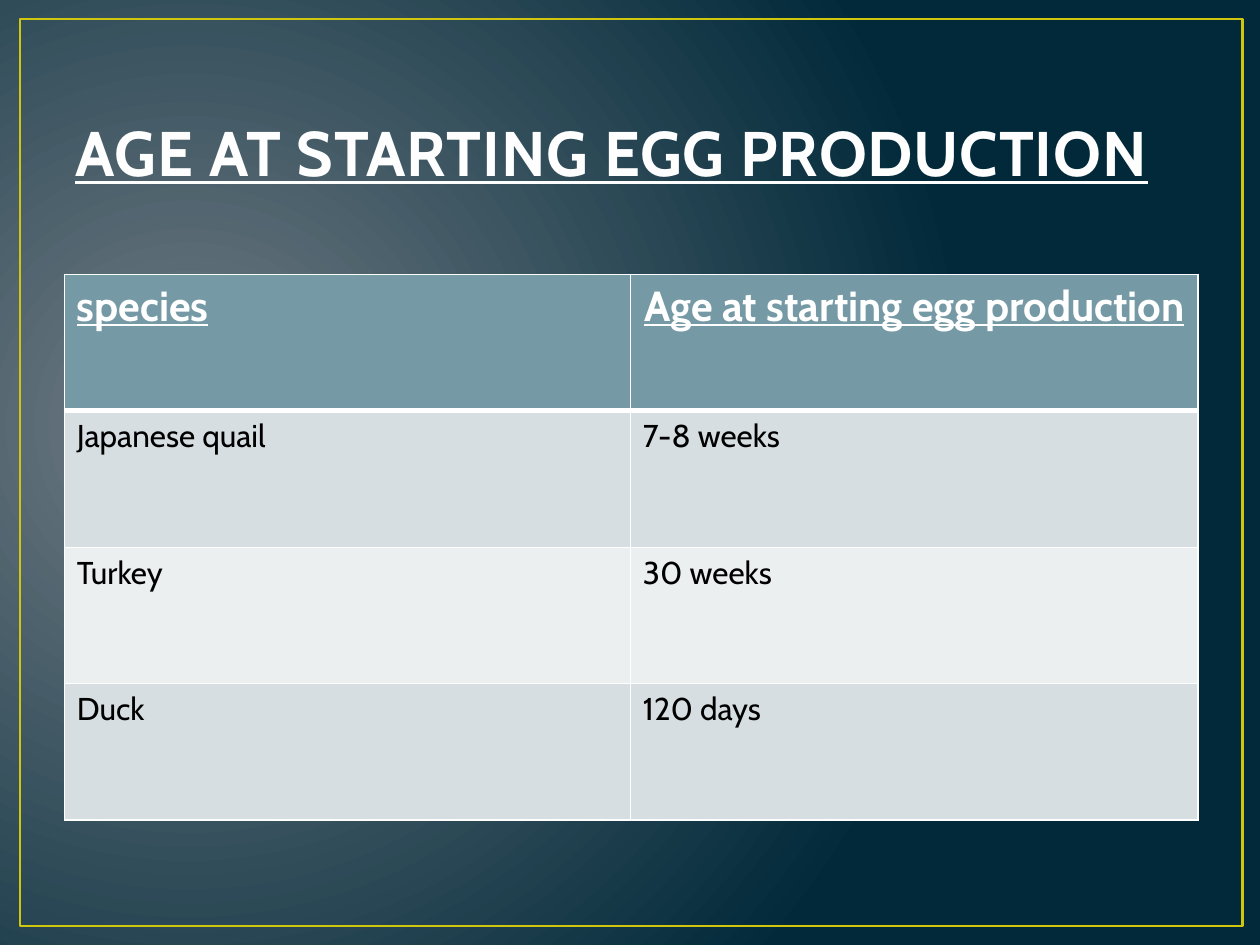
from dataclasses import dataclass

from lxml import etree
from pptx import Presentation
from pptx.dml.color import RGBColor
from pptx.enum import shapes, text
from pptx.oxml import ns
from pptx.util import Pt


@dataclass(frozen=True)
class Theme:
    font: str = "Cabin"
    glow: str = "717C84"
    night: str = "01293A"
    frame: str = "CFC60D"
    title: str = "FEFEFE"
    title_edge: str = "384F55"
    header: str = "759AA5"
    bands: tuple = ("D6DEE1", "ECEFF0")
    white: str = "FFFFFF"
    body: str = "000000"
    title_size: int = 36
    header_size: int = 24
    body_size: int = 18


THEME = Theme()
ROWS = [
    ("species", "Age at starting egg production"),
    ("Japanese quail", "7-8 weeks"),
    ("Turkey", "30 weeks"),
    ("Duck", "120 days"),
]


def rgb(value):
    return RGBColor.from_string(value)


def line_xml(tag, color, width):
    ln = etree.Element(ns.qn(tag), w=str(Pt(width)))
    fill = etree.SubElement(ln, ns.qn("a:solidFill"))
    etree.SubElement(fill, ns.qn("a:srgbClr"), val=color)
    return ln


def style(p, size, color, heading=False):
    f = p.font
    f.name, f.size = THEME.font, Pt(size)
    f.bold = f.underline = heading
    f.color.rgb = rgb(color)


def add_background(s):
    """Fill the slide with a glow that spreads from its left side."""
    fill = s.background.fill
    fill.gradient()
    for stop, color in zip(fill.gradient_stops, (THEME.glow, THEME.night)):
        stop.color.rgb = rgb(color)
    grad = s.background._cSld.find(".//" + ns.qn("a:gradFill"))
    grad.remove(grad.find(ns.qn("a:lin")))
    circle = etree.Element(ns.qn("a:path"), path="circle")
    etree.SubElement(circle, ns.qn("a:fillToRect"),
                     l="15000", t="50000", r="85000", b="60000")
    grad.find(ns.qn("a:gsLst")).addnext(circle)


def add_frame(s, x, y, w, h):
    sp = s.shapes.add_shape(shapes.MSO_SHAPE.RECTANGLE,
                            Pt(x), Pt(y), Pt(w), Pt(h))
    sp.shadow.inherit = False
    sp.fill.background()
    sp.line.color.rgb = rgb(THEME.frame)
    sp.line.width = Pt(1.5)


def add_title(s, x, y, w, h, words):
    tf = s.shapes.add_textbox(Pt(x), Pt(y), Pt(w), Pt(h)).text_frame
    tf.word_wrap = True
    tf.vertical_anchor = text.MSO_ANCHOR.BOTTOM
    p = tf.paragraphs[0]
    r = p.add_run()
    r.text = words
    style(p, THEME.title_size, THEME.title, heading=True)
    r_pr = r.font._element
    r_pr.set("spc", "50")
    r_pr.insert(0, line_xml("a:ln", THEME.title_edge, 1.05))


def set_borders(cell, top, bottom):
    widths = {"a:lnL": 1, "a:lnR": 1, "a:lnT": top, "a:lnB": bottom}
    tc_pr = cell._tc.get_or_add_tcPr()
    for i, (tag, width) in enumerate(widths.items()):
        tc_pr.insert(i, line_xml(tag, THEME.white, width))


def add_species_table(s, x, y, w, h, rows):
    """Table with a heavy rule below its header and banded body rows."""
    table = s.shapes.add_table(len(rows), len(rows[0]),
                               Pt(x), Pt(y), Pt(w), Pt(h)).table
    first = 323.5
    table.columns[0].width = Pt(first)
    table.columns[1].width = Pt(w - first)
    for i, row in enumerate(rows):
        header = i == 0
        for j, words in enumerate(row):
            cell = table.cell(i, j)
            cell.text = words
            p = cell.text_frame.paragraphs[0]
            cell.fill.solid()
            if header:
                color = THEME.header
                style(p, THEME.header_size, THEME.white, heading=True)
                if j:
                    p.alignment = text.PP_ALIGN.CENTER
            else:
                color = THEME.bands[(i - 1) % 2]
                style(p, THEME.body_size, THEME.body)
            cell.fill.fore_color.rgb = rgb(color)
            set_borders(cell, top=3 if i == 1 else 1,
                        bottom=3 if header else 1)


def main():
    prs = Presentation()
    prs.slide_width, prs.slide_height = Pt(720), Pt(540)
    s = prs.slides.add_slide(prs.slide_layouts[6])
    add_background(s)
    add_frame(s, 11.5, 10.8, 698.5, 518.4)
    add_title(s, 36, 21.6, 648, 90, "AGE AT STARTING EGG PRODUCTION")
    add_species_table(s, 36.75, 156.75, 648, 312, ROWS)
    prs.save("out.pptx")


if __name__ == "__main__":
    main()
